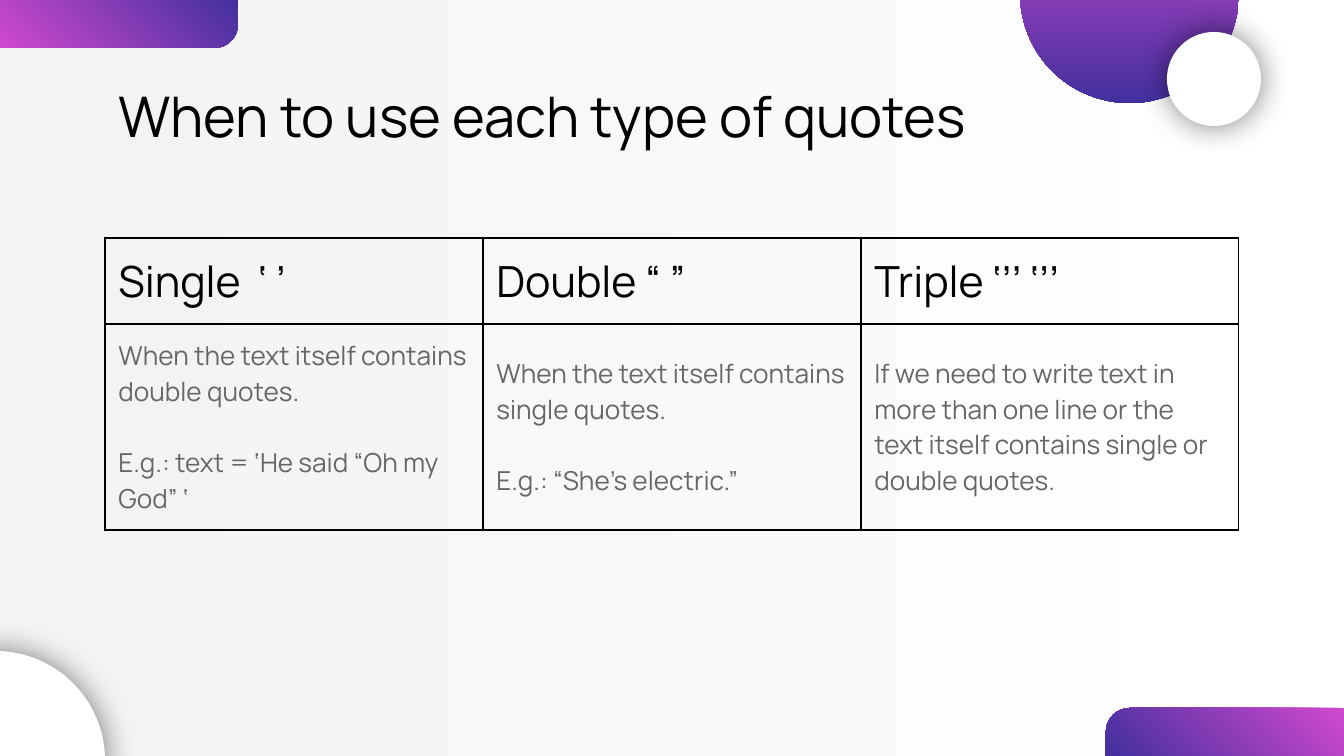
from lxml.etree import SubElement
from pptx import Presentation
from pptx.dml.color import RGBColor
from pptx.enum.shapes import MSO_SHAPE
from pptx.enum.text import MSO_ANCHOR, MSO_AUTO_SIZE, PP_ALIGN
from pptx.oxml import parse_xml
from pptx.oxml.ns import nsdecls, qn
from pptx.util import Emu, Pt

BLACK = RGBColor(0x00, 0x00, 0x00)
GREY = RGBColor(0x66, 0x66, 0x66)
WHITE = RGBColor(0xFF, 0xFF, 0xFF)
MIST = RGBColor(0xF3, 0xF3, 0xF3)
PINK = RGBColor(0xD1, 0x49, 0xCE)
INDIGO = RGBColor(0x43, 0x30, 0x9F)

# Content: one entry per column, heading and paragraphs
TITLE = "When to use each type of quotes"
QUOTES = [
    ("Single  ‘ ’", ["When the text itself contains double quotes.",
                     "E.g.: text = ‘He said “Oh my God” ‘"]),
    ("Double “ ”", ["When the text itself contains single quotes.",
                    "E.g.: “She’s electric.”"]),
    ("Triple ‘’’ ‘’’", ["If we need to write text in more than one line or the "
                        "text itself contains single or double quotes."]),
]

# Layout in px
WIDE, HIGH = 1344, 756
LEFT, TOP = 105, 238
COL, ROWS = 378, (86, 206)
TAB_W, TAB_H = 238, 48
BIG, SMALL = 219, 94

# Text formats
HEAD = {"name": "Manrope", "size": Pt(30), "bold": False}
LABEL = {**HEAD, "size": Pt(23)}
BODY = {**HEAD, "size": Pt(14)}
INSET = {f"margin_{side}": Pt(7.2) for side in ("left", "right", "top", "bottom")}


def px(n):
    return Emu(round(n * 914400 / 134.4))


def apply(obj, style):
    for key, value in style.items():
        setattr(obj, key, value)


def write(frame, lines, style, color):
    frame.text = "\n".join(lines)
    for i, para in enumerate(frame.paragraphs):
        para.alignment = PP_ALIGN.LEFT
        para.space_before = Pt(19 if i else 0)
        for run in para.runs:
            apply(run.font, style)
            run.font.color.rgb = color


def blend(fill, first, last, angle):
    fill.gradient()
    fill.gradient_angle = angle
    for stop, color in zip(fill.gradient_stops, (first, last)):
        stop.color.rgb = color


def add(kind, x, y, w, h):
    shape = slide.shapes.add_shape(kind, px(x), px(y), px(w), px(h))
    shape.shadow.inherit = False
    shape.line.fill.background()
    return shape


def corner(x, y, turn):
    shape = add(MSO_SHAPE.ROUND_1_RECTANGLE, x, y, TAB_W, TAB_H)
    shape.adjustments[0] = 0.5
    shape.rotation = turn
    shape._element.spPr.xfrm.set("flipH", "1")
    blend(shape.fill, PINK, INDIGO, 315)


def disc(x, y, size):
    shape = add(MSO_SHAPE.OVAL, x, y, size, size)
    shape.fill.solid()
    shape.fill.fore_color.rgb = WHITE
    # Soft black glow
    effects = shape._element.spPr.find(qn("a:effectLst"))
    glow = SubElement(effects, qn("a:outerShdw"), blurRad=str(Pt(16.9)),
                      dist="0", dir="0", algn="ctr", rotWithShape="0")
    tint = SubElement(glow, qn("a:srgbClr"), val=str(BLACK))
    SubElement(tint, qn("a:alpha"), val="50000")


def border(cell):
    props = cell._tc.get_or_add_tcPr()
    for i, side in enumerate("LRTB"):
        props.insert(i, parse_xml(
            f'<a:ln{side} {nsdecls("a")} w="{Pt(0.75)}"><a:solidFill>'
            f'<a:srgbClr val="{BLACK}"/></a:solidFill></a:ln{side}>'))


deck = Presentation()
apply(deck, {"slide_width": px(WIDE), "slide_height": px(HIGH)})
slide = deck.slides.add_slide(deck.slide_layouts[5])
blend(slide.background.fill, WHITE, MIST, 180)

# Corner decoration
corner(WIDE - TAB_W, HIGH - TAB_H, 0)
corner(0, 0, 180)
disc(-114, 651, BIG)

# Title
title = slide.shapes.title
apply(title, {"left": px(LEFT), "top": px(80),
              "width": px(3 * COL), "height": px(70)})
apply(title.text_frame, {**INSET, "word_wrap": True,
                         "auto_size": MSO_AUTO_SIZE.NONE,
                         "vertical_anchor": MSO_ANCHOR.MIDDLE})
write(title.text_frame, [TITLE], HEAD, BLACK)

# Table of quote types
table = slide.shapes.add_table(len(ROWS), len(QUOTES), px(LEFT), px(TOP),
                               px(COL * len(QUOTES)), px(sum(ROWS))).table
apply(table, {"first_row": False, "horz_banding": False})
for row, size in zip(table.rows, ROWS):
    row.height = px(size)
for c, (label, lines) in enumerate(QUOTES):
    table.columns[c].width = px(COL)
    parts = (([label], LABEL, BLACK), (lines, BODY, GREY))
    for r, part in enumerate(parts):
        cell = table.cell(r, c)
        apply(cell, {**INSET, "vertical_anchor": MSO_ANCHOR.MIDDLE})
        cell.fill.background()
        border(cell)
        write(cell.text_frame, *part)

# Circles at the top right
ball = add(MSO_SHAPE.OVAL, 1020, -116, BIG, BIG)
blend(ball.fill, PINK, INDIGO, 270)
disc(1167, 32, SMALL)

deck.save("out.pptx")
